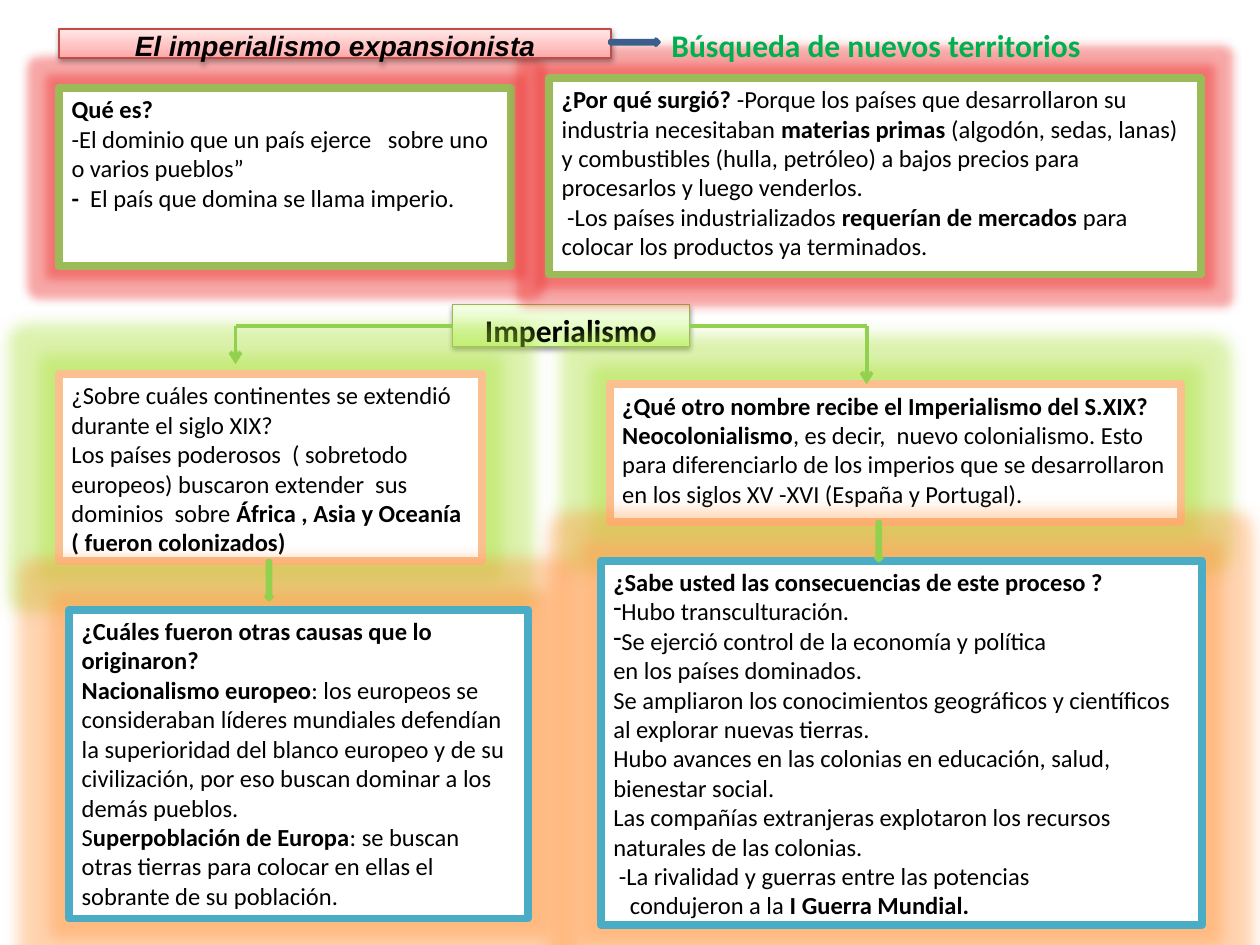
from copy import deepcopy

from lxml.etree import SubElement
from pptx import Presentation
from pptx.dml.color import RGBColor
from pptx.enum.shapes import MSO_CONNECTOR as CONN, MSO_SHAPE as SHAPE
from pptx.enum.text import MSO_ANCHOR as ANCHOR, MSO_AUTO_SIZE as AUTO, PP_ALIGN as ALIGN
from pptx.oxml.ns import qn
from pptx.util import Pt

COLORS = {
    "black": "000000", "white": "FFFFFF", "title": "00B050",
    "olive": "9BBB59", "peach": "FAC090", "teal": "4BACC6",
    "lime": "92D050", "blue": "4F81BD", "navy": "3A5F8C",
    "red_edge": "BF4C48", "green_edge": "98B955",
    "red_glow": "EB2522", "green_glow": "A8E034", "orange_glow": "FF943B",
}
RED_STOPS = ("FFA6A5", "FFC0BF", "FFE7E7")
GREEN_STOPS = ("DAFDA7", "E4FCC2", "F5FFE7")

WHAT = ["**Qué es?**",
        "-El dominio que un país ejerce   sobre uno o varios pueblos”",
        "**-  **El país que domina se llama imperio."]
WHY = ["**¿Por qué surgió? **-Porque los países que desarrollaron su industria necesitaban "
       "**materias primas **(algodón, sedas, lanas) y combustibles (hulla, petróleo) a bajos "
       "precios para procesarlos y luego venderlos.",
       " -Los países industrializados **requerían de mercados **para colocar los productos "
       "ya terminados."]
WHERE = ["¿Sobre cuáles continentes se extendió durante el siglo XIX?",
         "Los países poderosos  ( sobretodo europeos) buscaron extender  sus dominios  sobre "
         "**África , Asia y Oceanía ( fueron colonizados)**"]
NAME = ["**¿Qué otro nombre recibe el Imperialismo del S.XIX?**",
        "**Neocolonialismo**, es decir,  nuevo colonialismo. Esto  para diferenciarlo de los "
        "imperios que se desarrollaron en los siglos XV -XVI (España y Portugal)."]
CAUSES = ["**¿Cuáles fueron otras causas que lo originaron?**",
          "**Nacionalismo europeo**: los europeos se consideraban líderes mundiales defendían "
          "la superioridad del blanco europeo y de su civilización, por eso buscan dominar a "
          "los demás pueblos.",
          "S**uperpoblación de Europa**: se buscan otras tierras para colocar en ellas el "
          "sobrante de su población."]
EFFECTS = ["**¿Sabe usted las consecuencias de este proceso ?**",
           "Hubo transculturación.",
           "Se ejerció control de la economía y política",
           "en los países dominados.",
           "Se ampliaron los conocimientos geográficos y científicos al explorar nuevas tierras.",
           "Hubo avances en las colonias en educación, salud, bienestar social.",
           "Las compañías extranjeras explotaron los recursos naturales de las colonias.",
           " -La rivalidad y guerras entre las potencias",
           "condujeron a la **I Guerra Mundial.**"]


def rgb(name):
    """Return the colour of a name in the palette, or of a hex string."""
    return RGBColor.from_string(COLORS.get(name, name))


def add_effect(sp, tag, color, alpha, **attrs):
    """Give a shape one glow or outer shadow."""
    sp.shadow.inherit = False
    effects = sp._element.spPr.find(qn("a:effectLst"))
    effect = SubElement(effects, qn(f"a:{tag}"), {k: str(v) for k, v in attrs.items()})
    clr = SubElement(effect, qn("a:srgbClr"), val=COLORS[color])
    SubElement(clr, qn("a:alpha"), val=str(alpha * 1000))


def add_block(slide, kind, box, fill, line, width):
    """Add a preset shape with a plain fill and outline."""
    sp = slide.shapes.add_shape(kind, *map(Pt, box))
    sp.shadow.inherit = False
    sp.fill.solid()
    sp.fill.fore_color.rgb = rgb(fill)
    sp.line.color.rgb = rgb(line)
    sp.line.width = Pt(width)
    return sp


def write(tf, lines, size, color="black", font="Calibri", align=ALIGN.LEFT, italic=False):
    """Fill a text frame, with **marks** around bold words."""
    tf.word_wrap = True
    tf.vertical_anchor = ANCHOR.TOP
    for i, line in enumerate(lines):
        p = tf.paragraphs[0] if i == 0 else tf.add_paragraph()
        p.alignment = align
        for j, part in enumerate(line.split("**")):
            if part:
                r = p.add_run()
                r.text = part
                r.font.name, r.font.size = font, Pt(size)
                r.font.bold, r.font.italic = j % 2 == 1, italic
                r.font.color.rgb = rgb(color)


def add_panel(slide, box, edge, glow, radius, lines):
    """Add a white framed text panel with a coloured glow."""
    sp = add_block(slide, SHAPE.RECTANGLE, box, "white", edge, 4.5)
    add_effect(sp, "glow", glow, 40, rad=Pt(radius))
    write(sp.text_frame, lines, 14)
    return sp


def add_banner(slide, box, stops, edge):
    """Add a shaded heading bar with a soft shadow."""
    sp = add_block(slide, SHAPE.RECTANGLE, box, "white", edge, 0.75)
    sp.fill.gradient()
    sp.fill.gradient_angle = 90
    first = sp._element.spPr.find(qn("a:gradFill")).find(qn("a:gsLst"))[0]
    first.addnext(deepcopy(first))
    for stop, color, pos in zip(sp.fill.gradient_stops, stops, (0, 0.35, 1)):
        stop.color.rgb = rgb(color)
        stop.position = pos
    add_effect(sp, "outerShdw", "black", 38, blurRad=Pt(3.1), dist=Pt(1.6),
               dir=5400000, rotWithShape=0)
    return sp


def add_line(slide, start, end, arrow=False):
    """Add a green straight connector, with an arrowhead if asked."""
    line = slide.shapes.add_connector(CONN.STRAIGHT, *map(Pt, start + end))
    line.line.color.rgb = rgb("lime")
    line.line.width = Pt(2.25)
    if arrow:
        SubElement(line.line._get_or_add_ln(), qn("a:tailEnd"), type="arrow")
    SubElement(line._element.spPr, qn("a:effectLst"))
    return line


def main():
    """Build the slide on imperialism."""
    prs = Presentation()
    prs.slide_width, prs.slide_height = Pt(720), Pt(540)
    slide = prs.slides.add_slide(prs.slide_layouts[6])

    hub = add_banner(slide, (258.5, 174.2, 135.4, 23.8), GREEN_STOPS, "green_edge")
    write(hub.text_frame, ["**Imperialismo**"], 18, align=ALIGN.CENTER)

    add_panel(slide, (33.8, 50.4, 258.5, 101.5), "olive", "red_glow", 11, WHAT)
    add_panel(slide, (313.9, 44.6, 372.2, 112.3), "olive", "red_glow", 11, WHY)
    add_panel(slide, (33.8, 213.8, 241.9, 106.6), "peach", "green_glow", 18, WHERE)
    add_panel(slide, (348.5, 219.6, 326.2, 78.5), "peach", "green_glow", 18, NAME)
    add_panel(slide, (39.6, 348.5, 262.1, 176.4), "teal", "orange_glow", 18, CAUSES)
    effects = add_panel(slide, (343.4, 320.4, 343.4, 208.1), "teal", "orange_glow", 18, EFFECTS)
    paragraphs = effects.text_frame.paragraphs
    for p in paragraphs[1:3]:
        SubElement(p._p.get_or_add_pPr(), qn("a:buChar"), char="-")
    paragraphs[-1]._p.get_or_add_pPr().set("marL", str(Pt(9.5)))

    heading = add_banner(slide, (33.8, 16.6, 315.4, 16.6), RED_STOPS, "red_edge")
    tf = heading.text_frame
    tf.margin_left = tf.margin_right = tf.margin_top = tf.margin_bottom = 0
    write(tf, ["**El imperialismo expansionista**"], 16, font="Arial",
          align=ALIGN.CENTER, italic=True)
    tf.paragraphs[0].space_after = Pt(10)

    for x, y in ((500.4, 298.1), (151.9, 320.4)):
        add_block(slide, SHAPE.DOWN_ARROW, (x, y, 3.6, 22.3), "blue", "lime", 2)

    left, right, level = 134.6, 495.2, 186.1
    add_line(slide, (258.5, level), (left, level)).begin_connect(hub, 1)
    add_line(slide, (right, level), (393.9, level)).end_connect(hub, 3)
    add_line(slide, (right, level), (right, 219.6), arrow=True)
    add_line(slide, (left, level), (left, 208.1), arrow=True)

    add_block(slide, SHAPE.RIGHT_ARROW, (348.5, 22.3, 28.1, 3.6), "blue", "navy", 2)
    goal = slide.shapes.add_textbox(*map(Pt, (376.6, 11.5, 270, 28.8)))
    write(goal.text_frame, ["**Búsqueda de nuevos territorios**"], 18, "title")
    goal.text_frame.auto_size = AUTO.SHAPE_TO_FIT_TEXT

    prs.save("out.pptx")


if __name__ == "__main__":
    main()
